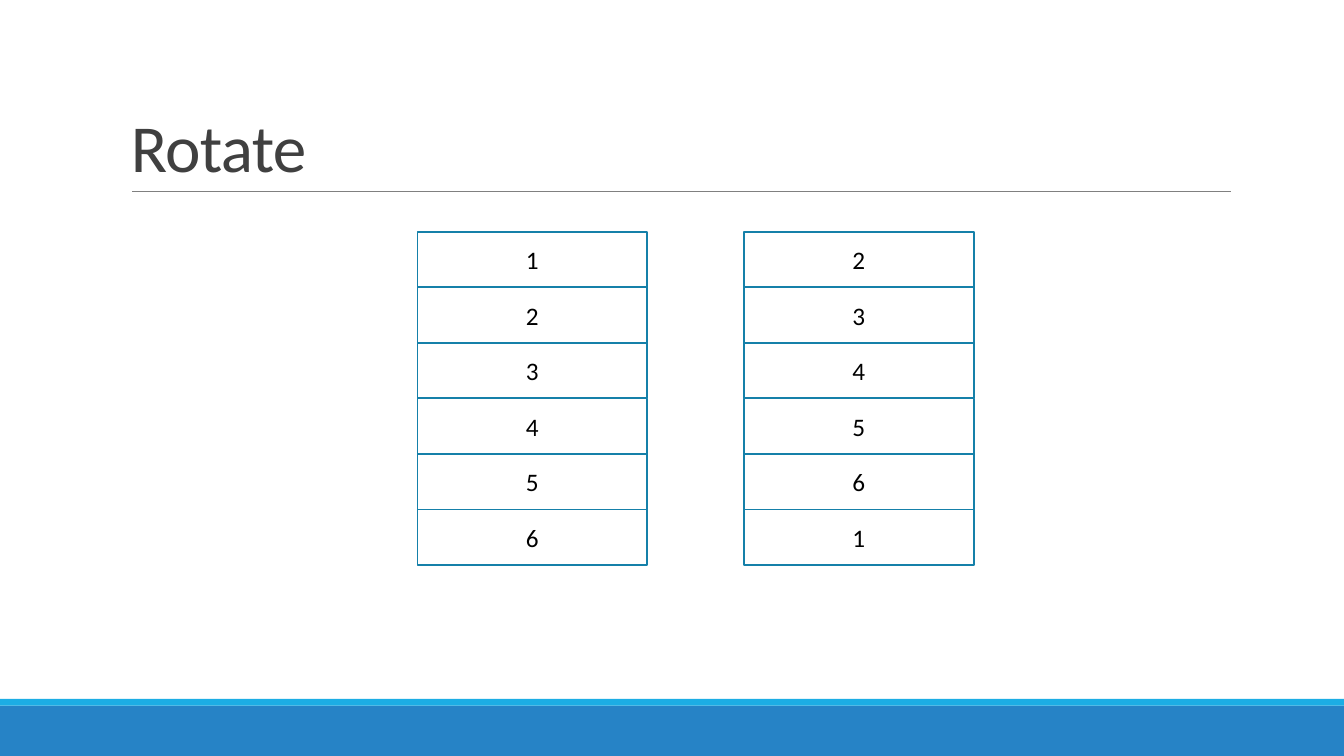
from pptx import Presentation
from pptx.dml.color import RGBColor
from pptx.enum.shapes import MSO_CONNECTOR, MSO_SHAPE
from pptx.enum.text import MSO_ANCHOR, PP_ALIGN
from pptx.oxml.ns import qn
from pptx.util import Cm, Pt
from lxml import etree

TITLE = "Rotate"
BEFORE = ["1", "2", "3", "4", "5", "6"]
AFTER = BEFORE[1:] + BEFORE[:1]
STACKS = [(10.52, BEFORE), (18.75, AFTER)]  # left edge in cm, values

SLIDE_W, SLIDE_H = 33.87, 19.05
CELL_W, CELL_H, STACK_TOP = 5.79, 1.4, 5.84
BAND_TOP, STRIPE_H = 17.78, 0.17

BLUE = RGBColor(0x26, 0x83, 0xC6)
CYAN = RGBColor(0x1C, 0xAD, 0xE4)
BORDER = RGBColor(0x15, 0x80, 0xA9)
GRAY = RGBColor(0x80, 0x80, 0x80)
DARK = RGBColor(0x40, 0x40, 0x40)
BLACK = RGBColor(0, 0, 0)

RECT = MSO_SHAPE.RECTANGLE
STRAIGHT = MSO_CONNECTOR.STRAIGHT
LEFT, CENTER = PP_ALIGN.LEFT, PP_ALIGN.CENTER
MIDDLE, BOTTOM = MSO_ANCHOR.MIDDLE, MSO_ANCHOR.BOTTOM


def write(sp, text, size=18, color=BLACK, align=CENTER, anchor=MIDDLE,
          line_spacing=None, tracking=None):
    """Tracking is in points."""
    tf = sp.text_frame
    tf.word_wrap = True
    tf.vertical_anchor = anchor
    p = tf.paragraphs[0]
    p.alignment = align
    p.line_spacing = line_spacing
    r = p.add_run()
    r.text = text
    r.font.name = "Calibri"
    r.font.size = Pt(size)
    r.font.color.rgb = color
    if tracking is not None:
        r.font._element.set("spc", str(round(tracking * 100)))


def add_rect(slide, left, top, width, height, fill=None, line=None):
    sp = slide.shapes.add_shape(RECT, Cm(left), Cm(top), Cm(width), Cm(height))
    sp.shadow.inherit = False
    if fill is None:
        sp.fill.background()
    else:
        sp.fill.solid()
        sp.fill.fore_color.rgb = fill
    if line is None:
        sp.line.fill.background()
    else:
        sp.line.color.rgb = line
        sp.line.width = Pt(1.25)
    return sp


def add_rule(slide, left, right, y):
    rule = slide.shapes.add_connector(STRAIGHT, Cm(left), Cm(y), Cm(right), Cm(y))
    rule.line.color.rgb = GRAY
    rule.line.width = Pt(0.5)
    etree.SubElement(rule._element.spPr, qn("a:effectLst"))


def main():
    prs = Presentation()
    prs.slide_width, prs.slide_height = Cm(SLIDE_W), Cm(SLIDE_H)
    slide = prs.slides.add_slide(prs.slide_layouts[6])

    add_rect(slide, 0, BAND_TOP, SLIDE_W, SLIDE_H - BAND_TOP, fill=BLUE)
    add_rect(slide, 0, BAND_TOP - STRIPE_H, SLIDE_W, STRIPE_H, fill=CYAN)
    add_rule(slide, 3.33, 31.01, 4.83)

    title = slide.shapes.add_textbox(Cm(3.05), Cm(0.79), Cm(27.94), Cm(4.04))
    write(title, TITLE, size=48, color=DARK, align=LEFT, anchor=BOTTOM,
          line_spacing=0.85, tracking=-0.5)

    for left, values in STACKS:
        for row, value in enumerate(values):
            cell = add_rect(slide, left, STACK_TOP + row * CELL_H,
                            CELL_W, CELL_H, line=BORDER)
            write(cell, value)

    prs.save("out.pptx")


if __name__ == "__main__":
    main()
